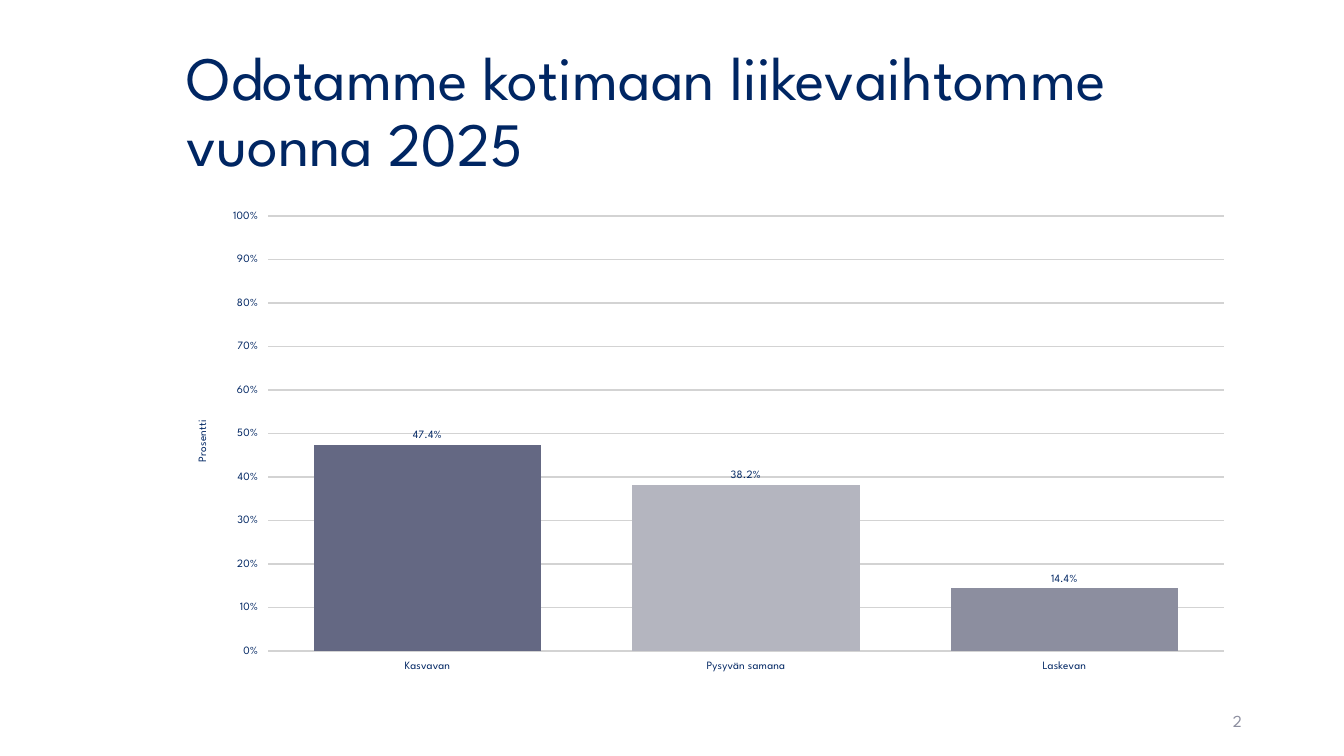
import pptx
import pptx.chart.data
import pptx.dml.color
import pptx.enum.chart
import pptx.enum.text
import pptx.oxml
import pptx.oxml.ns
import pptx.util
from dataclasses import dataclass

Cm, Pt = pptx.util.Cm, pptx.util.Pt
RGB = pptx.dml.color.RGBColor.from_string


@dataclass(frozen=True)
class Theme:
    font: str = "League Spartan"
    navy: str = "002663"
    grey: str = "8C8E9F"
    grid: str = "D3D3D3"
    bars: tuple = ("646883", "B4B5BF", "8C8E9F")
    title: int = 44
    number: int = 12
    chart: int = 18
    label: int = 8


theme = Theme()


def style(font, size, color=theme.navy):
    font.name = theme.font
    font.size = Pt(size)
    font.bold = False
    font.color.rgb = RGB(color)


prs = pptx.Presentation()
prs.slide_width, prs.slide_height = Cm(33.87), Cm(19.05)
s = prs.slides.add_slide(prs.slide_layouts[5])
left, width = Cm(4.45), Cm(26.9)

# Title
title = s.shapes.title
title.left, title.top, title.width, title.height = left, Cm(1.02), width, Cm(3.68)
tf = title.text_frame
tf.word_wrap = True
tf.auto_size = pptx.enum.text.MSO_AUTO_SIZE.NONE
tf.vertical_anchor = pptx.enum.text.MSO_ANCHOR.MIDDLE
p = tf.paragraphs[0]
p.alignment = pptx.enum.text.PP_ALIGN.LEFT
p.line_spacing = 0.9
r = p.add_run()
r.text = "Odotamme kotimaan liikevaihtomme vuonna 2025"
style(r.font, theme.title)

# Page number
number = s.shapes.add_textbox(Cm(23.93), Cm(17.65), Cm(7.62), Cm(1.02))
tf = number.text_frame
tf.word_wrap = True
tf.vertical_anchor = pptx.enum.text.MSO_ANCHOR.MIDDLE
p = tf.paragraphs[0]
p.alignment = pptx.enum.text.PP_ALIGN.RIGHT
p.space_after = Pt(6)
r = p.add_run()
r.text = "2"
style(r.font, theme.number, theme.grey)

# Column chart
data = pptx.chart.data.CategoryChartData()
data.categories = ["Kasvavan", "Pysyvän samana", "Laskevan"]
data.add_series("Series 1", (0.474, 0.382, 0.144))
chart = s.shapes.add_chart(
    pptx.enum.chart.XL_CHART_TYPE.COLUMN_CLUSTERED,
    left, Cm(5.08), width, Cm(12.09), data).chart
chart.has_legend = False
chart.has_title = False
style(chart.font, theme.chart)

# Bars and value labels
plot = chart.plots[0]
plot.gap_width, plot.overlap = 40, -2
plot.vary_by_categories = False
series = plot.series[0]
for i, color in enumerate(theme.bars):
    fill = series.points[i].format.fill
    fill.solid()
    fill.fore_color.rgb = RGB(color)
labels = series.data_labels
labels.show_value = True
labels.number_format, labels.number_format_is_linked = "0.0%", False
labels.position = pptx.enum.chart.XL_LABEL_POSITION.OUTSIDE_END
style(labels.font, theme.label)

# Axes and gridlines
cat_axis, val_axis = chart.category_axis, chart.value_axis
for axis in (cat_axis, val_axis):
    style(axis.tick_labels.font, theme.label)
    axis.format.line.fill.background()
    axis.major_tick_mark = pptx.enum.chart.XL_TICK_MARK.OUTSIDE
val_axis.minimum_scale, val_axis.maximum_scale = 0, 1
val_axis.major_unit = 0.1
val_axis.tick_labels.number_format = "0%"
val_axis.tick_labels.number_format_is_linked = False
val_axis.has_major_gridlines = True
grid = val_axis.major_gridlines.format.line
grid.color.rgb = RGB(theme.grid)
grid.width = Pt(1)

# Rotated axis title
tf = val_axis.axis_title.text_frame
r = tf.paragraphs[0].add_run()
r.text = "Prosentti"
style(r.font, theme.label)
body = val_axis.axis_title._element.xpath(".//a:bodyPr")[0]
body.set("rot", "-5400000")
body.set("vert", "horz")

# Plot area within the chart frame
area = chart._chartSpace.xpath(".//c:plotArea")[0]
for old in area.xpath("./c:layout"):
    area.remove(old)
area.insert(0, pptx.oxml.parse_xml(
    f'<c:layout {pptx.oxml.ns.nsdecls("c")}><c:manualLayout>'
    '<c:layoutTarget val="inner"/><c:xMode val="edge"/><c:yMode val="edge"/>'
    '<c:x val="0.086"/><c:y val="0.03"/><c:w val="0.895"/><c:h val="0.907"/>'
    '</c:manualLayout></c:layout>'))

prs.save("out.pptx")
